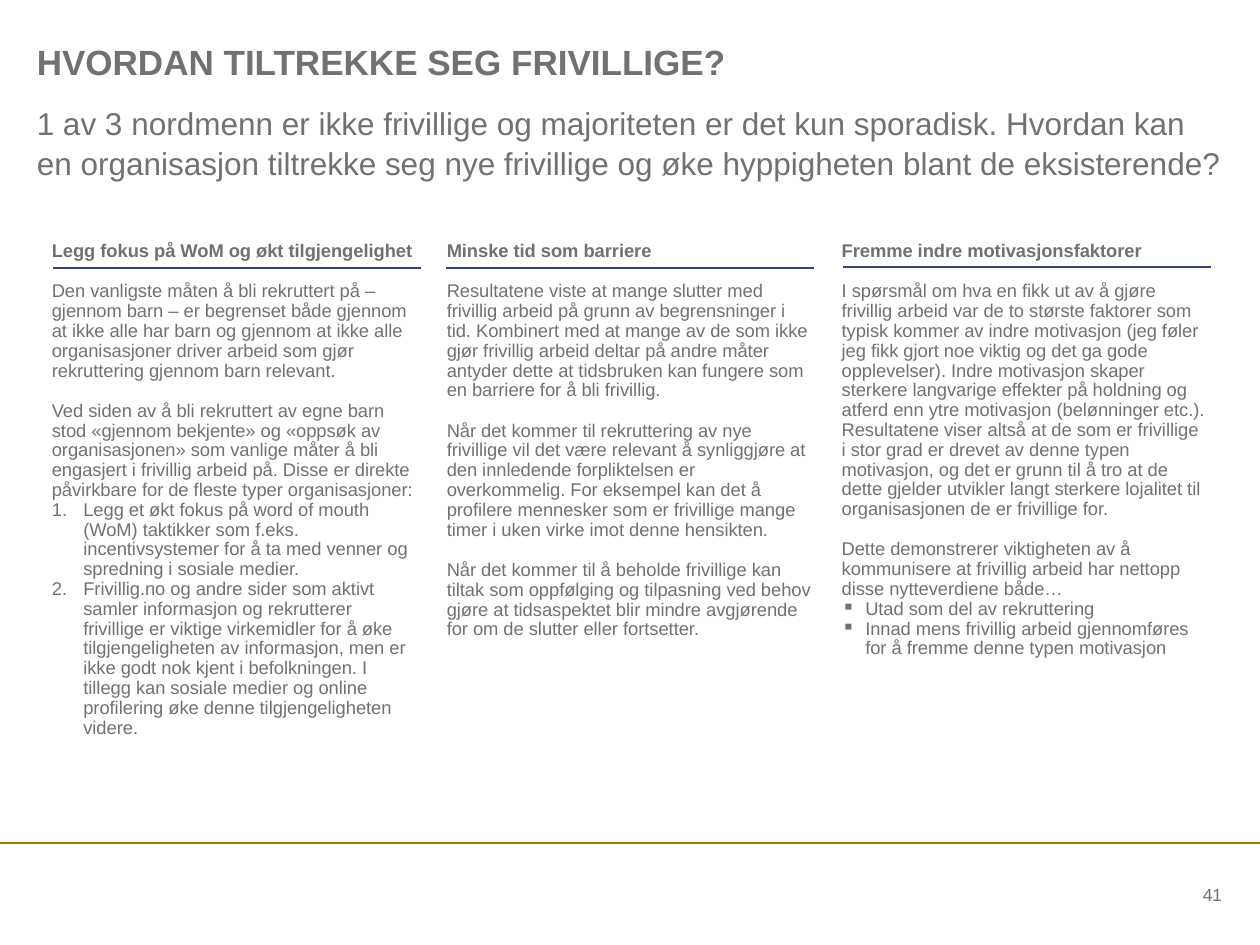
"""Build a slide on how organisations can attract volunteers."""
from dataclasses import dataclass

from lxml import etree
from pptx import Presentation
from pptx.dml.color import RGBColor
from pptx.enum import shapes, text as txt
from pptx.oxml import ns
from pptx.util import Pt


@dataclass(frozen=True)
class Theme:
    font: str = "Arial"
    ink: str = "717171"
    rule: str = "34407C"
    gold: str = "A07800"
    title: float = 20
    lead: float = 18
    copy: float = 10.5
    page: float = 10


theme = Theme()


def write(para, words, size=theme.copy, bold=False, gap=0, pitch=1,
          align=txt.PP_ALIGN.LEFT, mark=None, indent=0):
    props = para._p.get_or_add_pPr()
    props.set("marL", str(Pt(indent)))
    props.set("indent", str(-Pt(indent)))
    if mark == "1.":
        etree.SubElement(props, ns.qn("a:buAutoNum"), type="arabicPeriod")
    elif mark:
        etree.SubElement(props, ns.qn("a:buChar"), char=mark)
    else:
        etree.SubElement(props, ns.qn("a:buNone"))
    para.alignment = align
    para.line_spacing = pitch
    para.space_before = Pt(gap)
    para.space_after = Pt(0)
    run = para.add_run()
    run.text = words
    font = run.font
    font.name, font.size, font.bold = theme.font, Pt(size), bold
    font.color.rgb = RGBColor.from_string(theme.ink)


def draw(left, top, width, color, weight):
    line = slide.shapes.add_connector(
        shapes.MSO_CONNECTOR.STRAIGHT, Pt(left), Pt(top), Pt(left + width), Pt(top))
    line.line.color.rgb = RGBColor.from_string(color)
    line.line.width = Pt(weight)
    etree.SubElement(line._element.spPr, ns.qn("a:effectLst"))


deck = Presentation()
deck.slide_width, deck.slide_height = Pt(720), Pt(540)
slide = deck.slides.add_slide(deck.slide_layouts[1])
draw(0, 481.7, 720, theme.gold, 1.5)

title, lead = slide.placeholders
page = slide.shapes.add_textbox(Pt(640.8), Pt(504), Pt(57.6), Pt(14.4))
boxes = [
    (title, (21, 23, 677.5, 33), "HVORDAN TILTREKKE SEG FRIVILLIGE?",
     dict(size=theme.title, bold=True)),
    (lead, (21, 58.3, 677.5, 31),
     "1 av 3 nordmenn er ikke frivillige og majoriteten er det kun sporadisk. "
     "Hvordan kan en organisasjon tiltrekke seg nye frivillige og øke "
     "hyppigheten blant de eksisterende?", dict(size=theme.lead, pitch=1.05)),
    (page, (640.8, 504, 57.6, 14.4), "41",
     dict(size=theme.page, align=txt.PP_ALIGN.RIGHT)),
]
for box, place, words, form in boxes:
    box.left, box.top, box.width, box.height = map(Pt, place)
    frame = box.text_frame
    frame.margin_left = frame.margin_right = Pt(0)
    frame.margin_top = frame.margin_bottom = Pt(0)
    frame.word_wrap = True
    frame.auto_size = txt.MSO_AUTO_SIZE.NONE
    frame.vertical_anchor = (
        txt.MSO_ANCHOR.MIDDLE if box is page else txt.MSO_ANCHOR.TOP)
    write(frame.paragraphs[0], words, **form)

head = dict(bold=True)
part = dict(gap=11.7)
step = dict(mark="1.", indent=18)
dot = dict(mark="▪", indent=13.5)
cols = [
    [("Legg fokus på WoM og økt tilgjengelighet", head),
     ("Den vanligste måten å bli rekruttert på – gjennom barn – er begrenset "
      "både gjennom at ikke alle har barn og gjennom at ikke alle organisasjoner "
      "driver arbeid som gjør rekruttering gjennom barn relevant.", part),
     ("Ved siden av å bli rekruttert av egne barn stod «gjennom bekjente» og "
      "«oppsøk av organisasjonen» som vanlige måter å bli engasjert i frivillig "
      "arbeid på. Disse er direkte påvirkbare for de fleste typer "
      "organisasjoner:", part),
     ("Legg et økt fokus på word of mouth (WoM) taktikker som f.eks. "
      "incentivsystemer for å ta med venner og spredning i sosiale medier.", step),
     ("Frivillig.no og andre sider som aktivt samler informasjon og rekrutterer "
      "frivillige er viktige virkemidler for å øke tilgjengeligheten av "
      "informasjon, men er ikke godt nok kjent i befolkningen. I tillegg kan "
      "sosiale medier og online profilering øke denne tilgjengeligheten "
      "videre.", step)],
    [("Minske tid som barriere", head),
     ("Resultatene viste at mange slutter med frivillig arbeid på grunn av "
      "begrensninger i tid. Kombinert med at mange av de som ikke gjør frivillig "
      "arbeid deltar på andre måter antyder dette at tidsbruken kan fungere som "
      "en barriere for å bli frivillig.", part),
     ("Når det kommer til rekruttering av nye frivillige vil det være relevant å "
      "synliggjøre at den innledende forpliktelsen er overkommelig. For eksempel "
      "kan det å profilere mennesker som er frivillige mange timer i uken virke "
      "imot denne hensikten.", part),
     ("Når det kommer til å beholde frivillige kan tiltak som oppfølging og "
      "tilpasning ved behov gjøre at tidsaspektet blir mindre avgjørende for om "
      "de slutter eller fortsetter.", part)],
    [("Fremme indre motivasjonsfaktorer", head),
     ("I spørsmål om hva en fikk ut av å gjøre frivillig arbeid var de to største "
      "faktorer som typisk kommer av indre motivasjon (jeg føler jeg fikk gjort "
      "noe viktig og det ga gode opplevelser). Indre motivasjon skaper sterkere "
      "langvarige effekter på holdning og atferd enn ytre motivasjon (belønninger "
      "etc.). Resultatene viser altså at de som er frivillige i stor grad er "
      "drevet av denne typen motivasjon, og det er grunn til å tro at de dette "
      "gjelder utvikler langt sterkere lojalitet til organisasjonen de er "
      "frivillige for.", part),
     ("Dette demonstrerer viktigheten av å kommunisere at frivillig arbeid har "
      "nettopp disse nytteverdiene både…", part),
     ("Utad som del av rekruttering", dot),
     ("Innad mens frivillig arbeid gjennomføres for å fremme denne typen "
      "motivasjon", dot)],
]
grid = slide.shapes.add_table(
    1, len(cols), Pt(21), Pt(134.6), Pt(677), Pt(322)).table
grid.first_row = grid.horz_banding = False
for cell, items in zip(grid.rows[0].cells, cols):
    cell.fill.background()
    cell.margin_left = cell.margin_right = Pt(8.64)
    cell.margin_top = cell.margin_bottom = Pt(3.6)
    frame = cell.text_frame
    for i, (words, form) in enumerate(items):
        para = frame.add_paragraph() if i else frame.paragraphs[0]
        write(para, words, pitch=0.97, **form)

for left, top in ((30.2, 153.2), (254.9, 153.2), (481.7, 152.7)):
    draw(left, top, 210.2, theme.rule, 1)

deck.save("out.pptx")
